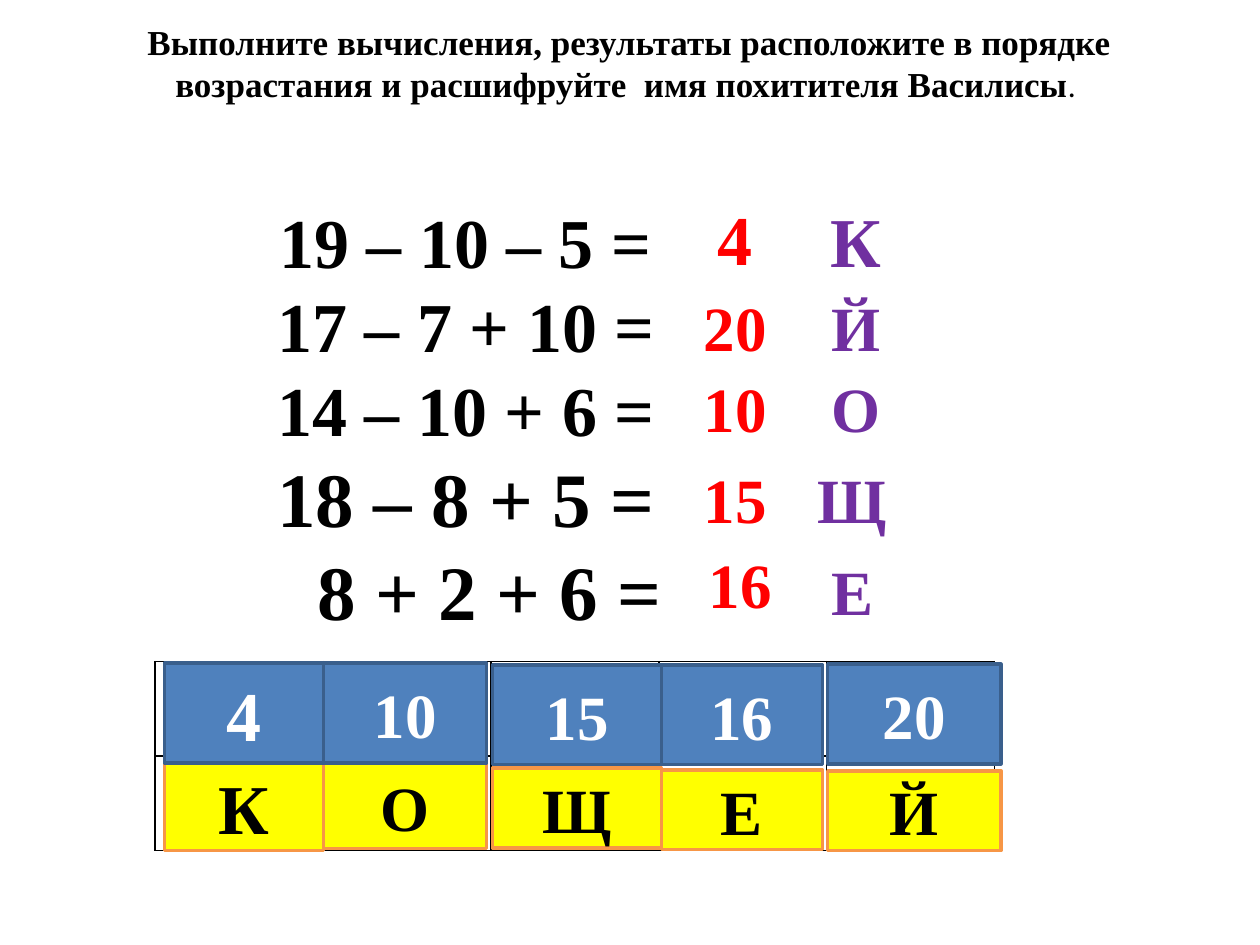
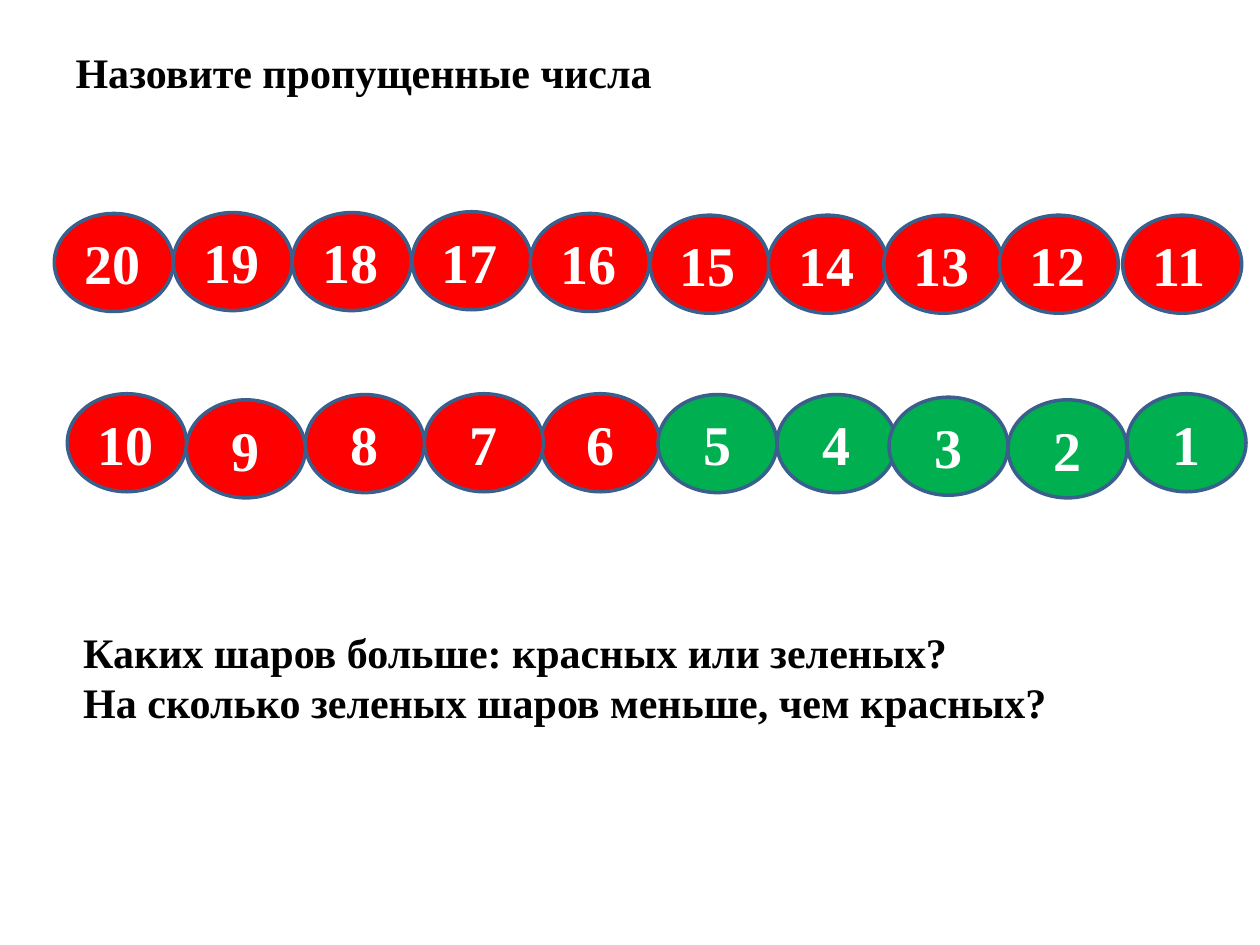
from pptx import Presentation
from pptx.dml.color import RGBColor
from pptx.enum import shapes, text
from pptx.oxml import parse_xml
from pptx.oxml.ns import nsdecls
from pptx.util import Pt

SERIF = "Times New Roman"
COLORS = {
    "black": "000000", "white": "FFFFFF", "red": "FF0000", "green": "00B050",
    "purple": "7030A0", "yellow": "FFFF00", "orange": "F79646",
    "blue": "4F81BD", "dark blue": "3A5F8C",
}
TITLE_ONLY = 5
LEFT, CENTER = text.PP_ALIGN.LEFT, text.PP_ALIGN.CENTER
RECT, OVAL = shapes.MSO_SHAPE.RECTANGLE, shapes.MSO_SHAPE.OVAL

# equation, indent, font size, line height
EQUATIONS = [
    ("19 – 10 – 5 =", 110, 40, 48),
    ("17 – 7 + 10 =", 109, 40, 48),
    ("14 – 10 + 6 =", 109, 40, 48),
    ("18 – 8 + 5 =", 109, 44, 53),
    ("8 + 2 + 6 =", 132, 44, 53),
]
# answer, its left and top, letter, its left and top
ANSWERS = [
    ("4", 390, 113, "К", 459, 114.5),
    ("20", 390, 164, "Й", 459, 164),
    ("10", 390, 210, "О", 459, 210),
    ("15", 390, 262, "Щ", 457, 262),
    ("16", 393, 311, "Е", 457, 315),
]
# number, letter, left, width, number top, letter top, letter height
CIPHER = [
    ("4", "К", 94, 91, 379, 436, 50),
    ("10", "О", 185, 93, 379, 436, 49),
    ("15", "Щ", 281.5, 96.5, 380, 439, 45.5),
    ("16", "Е", 378, 92, 380, 440, 45.5),
    ("20", "Й", 473, 99, 379.5, 440.5, 45.5),
]
# number, left, top; from back to front
UPPER_BALLS = [
    (20, 31, 122), (19, 99, 121.5), (18, 167, 121.5), (17, 235.5, 121),
    (16, 303, 122), (15, 371.5, 123), (14, 439, 123), (13, 505, 123),
    (12, 571, 123), (11, 641.5, 123),
]
LOWER_BALLS = [
    (6, 309, 225), (7, 242.5, 225), (8, 174.5, 225.5), (9, 106.5, 228.5),
    (10, 38.5, 225), (5, 376, 225.5), (4, 444, 225.5), (3, 508, 227),
    (2, 576, 228.5), (1, 644, 225),
]


def rgb(color):
    return RGBColor.from_string(COLORS[color])


def style(paragraph, size, color="black", align=LEFT):
    paragraph.alignment = align
    font = paragraph.font
    font.name, font.size, font.bold = SERIF, Pt(size), True
    font.color.rgb = rgb(color)


def add_titled_slide(prs, title, box, size, align, anchor):
    slide = prs.slides.add_slide(prs.slide_layouts[TITLE_ONLY])
    heading = slide.shapes.title
    heading.left, heading.top, heading.width, heading.height = map(Pt, box)
    frame = heading.text_frame
    frame.text = title
    frame.auto_size = text.MSO_AUTO_SIZE.NONE
    frame.vertical_anchor = anchor
    style(frame.paragraphs[0], size, align=align)
    return slide


def add_label(slide, kind, label, box, size, fill, color, line=None, align=CENTER):
    """A filled shape with one short bold label; no outline unless line is given."""
    shape = slide.shapes.add_shape(kind, *map(Pt, box))
    shape.shadow.inherit = False
    shape.fill.solid()
    shape.fill.fore_color.rgb = rgb(fill)
    if line:
        shape.line.color.rgb = rgb(line)
        shape.line.width = Pt(2)
    else:
        shape.line.fill.background()
    frame = shape.text_frame
    frame.text = label
    frame.vertical_anchor = text.MSO_ANCHOR.MIDDLE
    style(frame.paragraphs[0], size, color, align)


def add_lines(slide, box, lines, top_margin=3.6):
    """A text box; each line is (text, indent, size, line height)."""
    frame = slide.shapes.add_textbox(*map(Pt, box)).text_frame
    frame.word_wrap = True
    frame.margin_top = Pt(top_margin)
    for i, (line, indent, size, height) in enumerate(lines):
        paragraph = frame.add_paragraph() if i else frame.paragraphs[0]
        paragraph.text = line
        paragraph.line_spacing = Pt(height)
        paragraph._p.get_or_add_pPr().set("marL", str(Pt(indent)))
        style(paragraph, size)


def add_empty_grid(slide, rows, columns, box):
    grid = slide.shapes.add_table(rows, columns, *map(Pt, box)).table
    for cell in grid.iter_cells():
        cell.fill.solid()
        cell.fill.fore_color.rgb = rgb("white")
        properties = cell._tc.get_or_add_tcPr()
        for i, side in enumerate(("lnL", "lnR", "lnT", "lnB")):
            properties.insert(i, parse_xml(
                f'<a:{side} {nsdecls("a")} w="{Pt(1)}"><a:solidFill>'
                f'<a:srgbClr val="{COLORS["black"]}"/></a:solidFill></a:{side}>'))


def label_size(row):
    return 36 if row else 40


def build_cipher_slide(prs):
    slide = add_titled_slide(
        prs, "Выполните вычисления, результаты расположите в порядке возрастания "
        "и расшифруйте  имя похитителя Василисы",
        (42, 8, 635, 55.5), 20, CENTER, text.MSO_ANCHOR.TOP)
    full_stop = slide.shapes.title.text_frame.paragraphs[0].add_run()
    full_stop.text = ". "
    full_stop.font.name, full_stop.font.size = "Calibri", Pt(18)
    full_stop.font.bold = False

    add_lines(slide, (42.5, 66, 572, 470), EQUATIONS, top_margin=47.5)
    add_empty_grid(slide, 2, 5, (88.5, 378, 480, 108))
    for row, (answer, x, y, letter, letter_x, letter_y) in enumerate(ANSWERS):
        size = label_size(row)
        add_label(slide, RECT, answer, (x, y, 60, 45), size, "white", "red")
        add_label(slide, RECT, letter, (letter_x, letter_y, 60, 45), size,
                  "white", "purple")
    for column, (_, letter, x, width, _, y, height) in enumerate(CIPHER):
        add_label(slide, RECT, letter, (x, y, width, height), label_size(column),
                  "yellow", "black", "orange")
    for column, (number, _, x, width, y, _, _) in enumerate(CIPHER):
        add_label(slide, RECT, number, (x, y, width, 57), label_size(column),
                  "blue", "white", "dark blue")


def build_balls_slide(prs):
    slide = add_titled_slide(prs, "Назовите пропущенные числа", (36, 21.5, 648, 39),
                             24, LEFT, text.MSO_ANCHOR.MIDDLE)
    for number, x, y in UPPER_BALLS + LOWER_BALLS:
        add_label(slide, OVAL, str(number), (x, y, 68, 56), 32,
                  "green" if number <= 5 else "red", "white", "dark blue",
                  LEFT if number >= 10 else CENTER)
    questions = ["Каких шаров больше: красных или зеленых?",
                 "На сколько зеленых шаров меньше, чем красных?"]
    add_lines(slide, (40.5, 355, 571, 87), [(q, 0, 24, 28.5) for q in questions])


def main():
    prs = Presentation()
    prs.slide_width, prs.slide_height = Pt(720), Pt(540)
    build_cipher_slide(prs)
    build_balls_slide(prs)
    prs.save("out.pptx")


if __name__ == "__main__":
    main()
